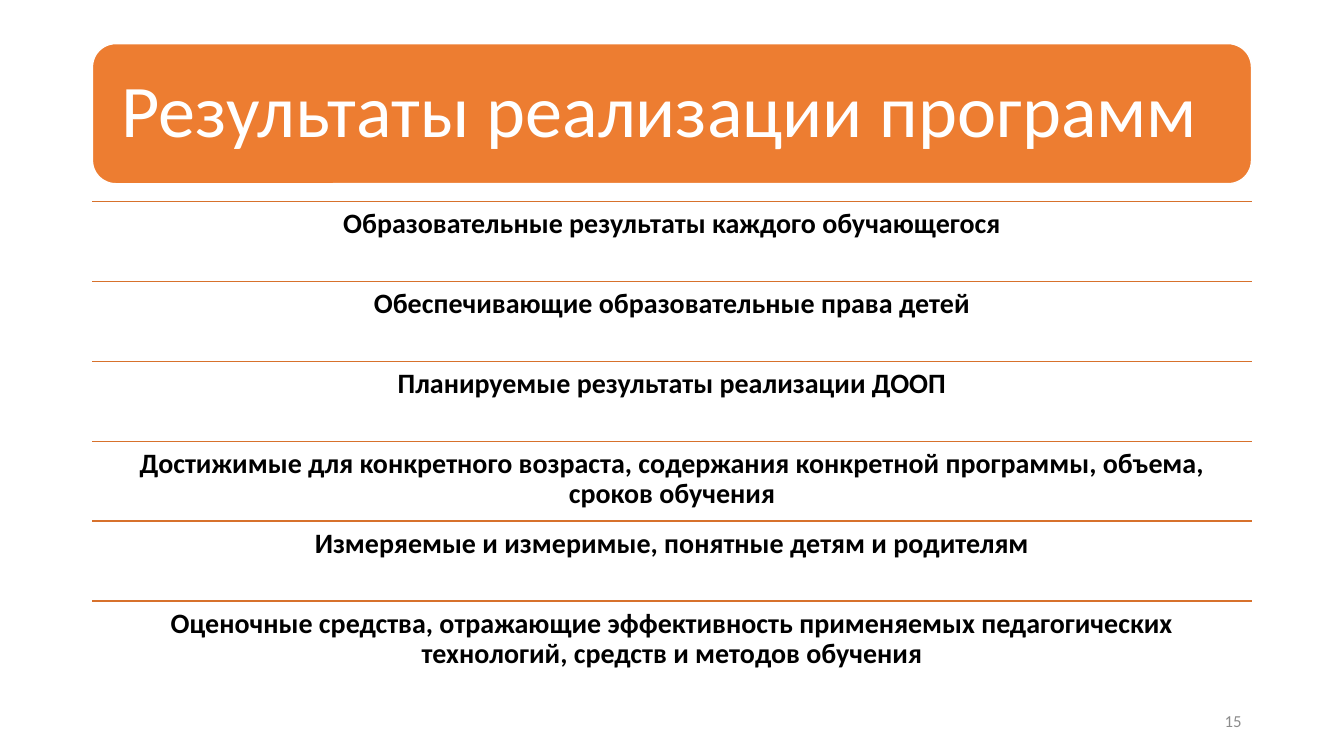
from lxml import etree
from pptx import Presentation
from pptx import util as u
from pptx.dml.color import RGBColor
from pptx.enum import shapes, text
from pptx.oxml.ns import qn

ORANGE = RGBColor(0xED, 0x7D, 0x31)
RULE = RGBColor(0xD7, 0x71, 0x2C)
WHITE = RGBColor(0xFF, 0xFF, 0xFF)
BLACK = RGBColor(0, 0, 0)
GRAY = RGBColor(0x8C, 0x8C, 0x8C)

TITLE = "Результаты реализации программ"
RESULTS = [
    "Образовательные результаты каждого обучающегося",
    "Обеспечивающие образовательные права детей",
    "Планируемые результаты реализации ДООП",
    "Достижимые для конкретного возраста, содержания конкретной программы, объема, сроков обучения",
    "Измеряемые и измеримые, понятные детям и родителям",
    "Оценочные средства, отражающие эффективность применяемых педагогических технологий, средств и методов обучения",
]


def write(shape, words, size, color, align, anchor, inset, bold=False, spacing=1.0):
    frame = shape.text_frame
    frame.word_wrap = True
    frame.vertical_anchor = anchor
    frame.margin_left = frame.margin_right = inset
    frame.margin_top = frame.margin_bottom = inset
    paragraph = frame.paragraphs[0]
    paragraph.text = words
    paragraph.alignment = align
    paragraph.line_spacing = spacing
    paragraph.font.name = "Calibri"
    paragraph.font.size = u.Pt(size)
    paragraph.font.bold = bold
    paragraph.font.color.rgb = color


def add_title(slide, left, top, width, height):
    banner = slide.shapes.add_shape(
        shapes.MSO_SHAPE.ROUNDED_RECTANGLE, left, top, width, height)
    banner.shadow.inherit = False
    banner.fill.solid()
    banner.fill.fore_color.rgb = ORANGE
    banner.line.color.rgb = WHITE
    banner.line.width = u.Pt(1)
    write(banner, TITLE, 53, WHITE, text.PP_ALIGN.LEFT,
          text.MSO_ANCHOR.MIDDLE, u.Cm(0.56), spacing=0.9)


def add_results(slide, left, top, width, height):
    row_height = height // len(RESULTS)
    for index, result in enumerate(RESULTS):
        row_top = top + index * row_height
        rule = slide.shapes.add_connector(
            shapes.MSO_CONNECTOR.STRAIGHT, left, row_top, left + width, row_top)
        rule.line.color.rgb = RULE
        rule.line.width = u.Pt(1)
        etree.SubElement(rule.element.spPr, qn("a:effectLst"))
        row = slide.shapes.add_textbox(left, row_top, width, row_height)
        write(row, result, 20, BLACK, text.PP_ALIGN.CENTER,
              text.MSO_ANCHOR.TOP, u.Cm(0.2), bold=True, spacing=0.9)


def add_page_number(slide, left, top, width, height):
    number = slide.shapes.add_textbox(left, top, width, height)
    write(number, "15", 12, GRAY, text.PP_ALIGN.RIGHT,
          text.MSO_ANCHOR.MIDDLE, u.Cm(0.25))


def main():
    presentation = Presentation()
    presentation.slide_width = u.Cm(33.87)
    presentation.slide_height = u.Cm(19.05)
    slide = presentation.slides.add_slide(presentation.slide_layouts[6])
    left, width = u.Cm(2.33), u.Cm(29.21)
    add_title(slide, left, u.Cm(1.1), width, u.Cm(3.53))
    add_results(slide, left, u.Cm(5.08), width, u.Cm(12.08))
    add_page_number(slide, u.Cm(23.92), u.Cm(17.66), u.Cm(7.62), u.Cm(1.01))
    presentation.save("out.pptx")


if __name__ == "__main__":
    main()
